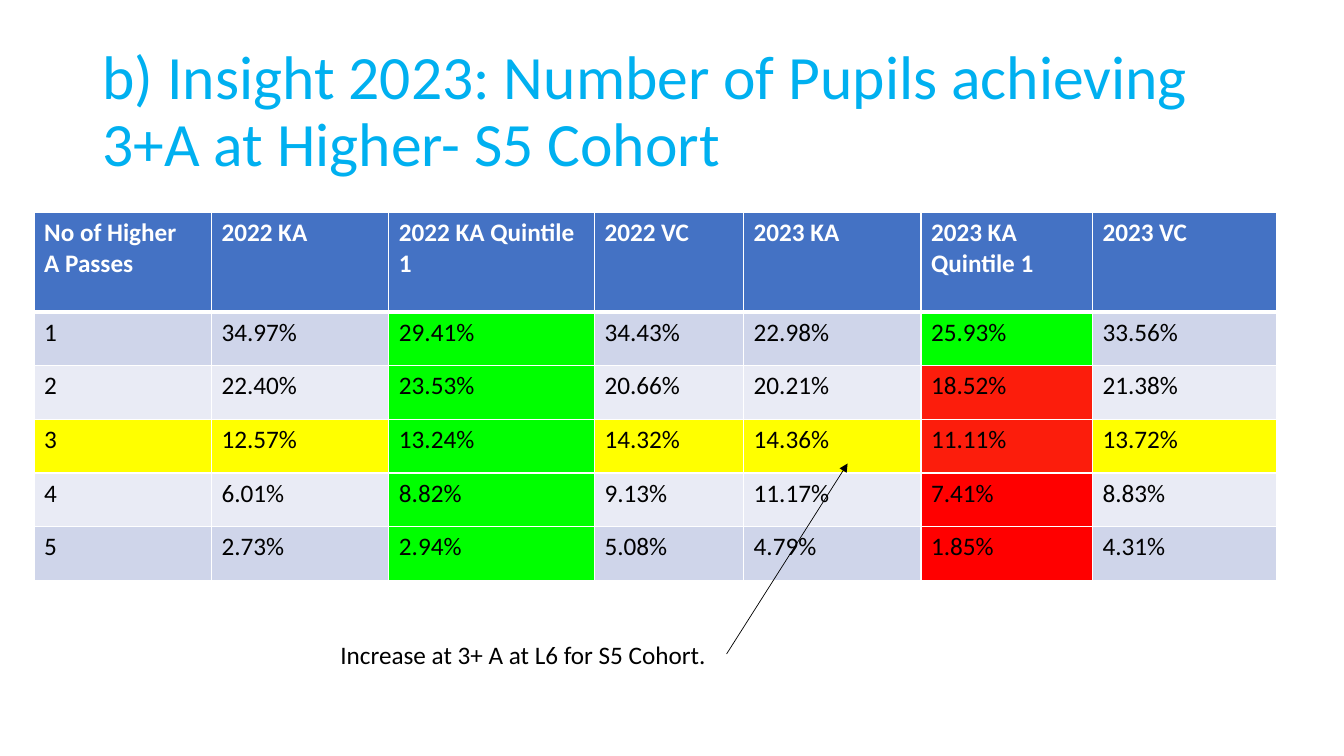
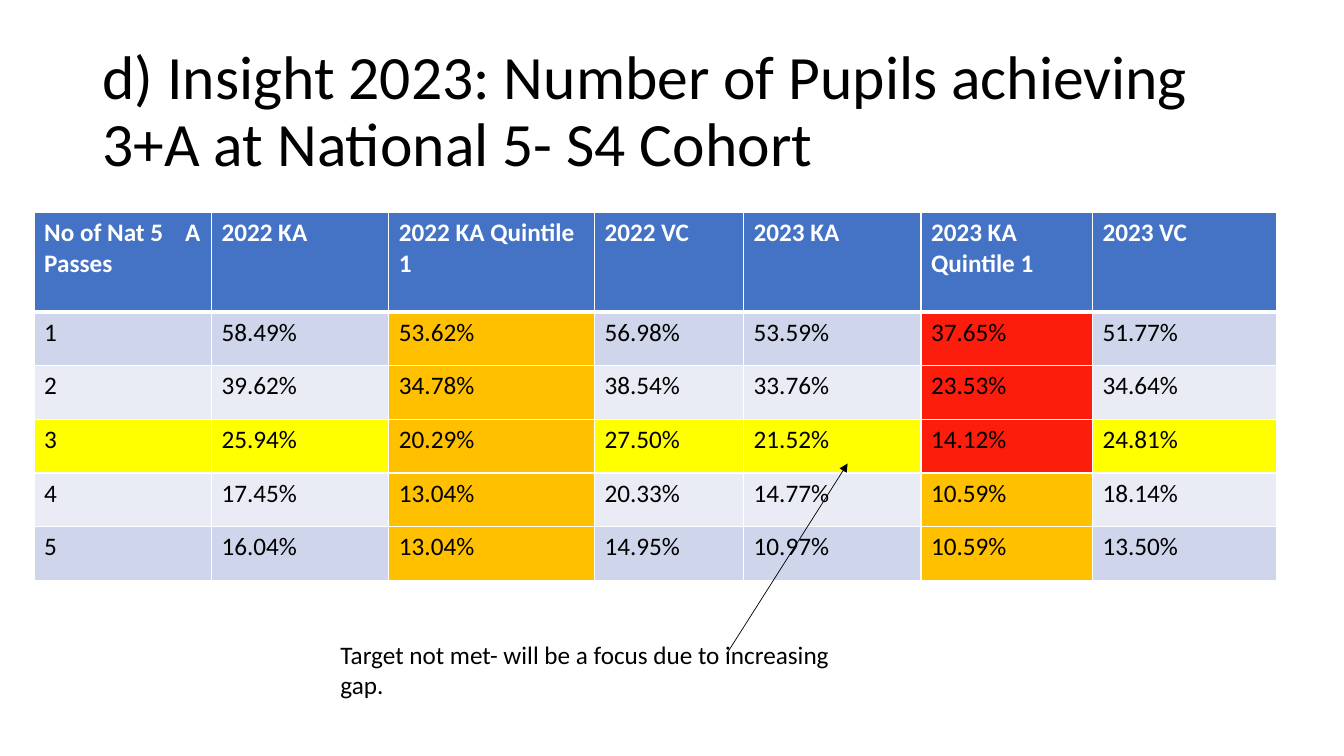
from pptx import Presentation
from pptx.dml.color import RGBColor
from pptx.enum.shapes import MSO_CONNECTOR
from pptx.enum.text import MSO_ANCHOR, MSO_AUTO_SIZE, PP_ALIGN
from pptx.oxml.ns import qn
from pptx.util import Cm, Pt
from lxml.etree import SubElement

BLACK = RGBColor(0x00, 0x00, 0x00)
WHITE = RGBColor(0xFF, 0xFF, 0xFF)
SKY = RGBColor(0x00, 0xB0, 0xF0)
HEADER_BLUE = RGBColor(0x44, 0x72, 0xC4)
BANDS = RGBColor(0xCF, 0xD5, 0xEA), RGBColor(0xE9, 0xEB, 0xF5)
YELLOW = RGBColor(0xFF, 0xFF, 0x00)
GREEN = RGBColor(0x00, 0xFF, 0x00)
AMBER = RGBColor(0xFF, 0xC0, 0x00)
SCARLET = RGBColor(0xFC, 0x1D, 0x0C)
RED = RGBColor(0xFF, 0x00, 0x00)

FONT = "Calibri"
TITLE_FONT = {"name": FONT, "size": Pt(44), "bold": False}
HEADER_FONT = {"name": FONT, "size": Pt(18), "bold": True, "color": WHITE}
BODY_FONT = {"name": FONT, "size": Pt(18), "bold": False, "color": BLACK}

TITLE_AREA = {"left": Cm(2.33), "top": Cm(1.01), "width": Cm(29.21), "height": Cm(3.68)}
TABLE_LEFT, TABLE_TOP = Cm(0.86), Cm(5.36)
COLUMN_WIDTHS = [Cm(width) for width in (4.47, 4.47, 5.18, 3.76, 4.47, 4.32, 4.65)]
HEADER_HEIGHT, ROW_HEIGHT = Cm(2.51), Cm(1.35)
TAB_STOP = Cm(3.55)
ARROW = Cm(18.31), Cm(16.48), Cm(21.36), Cm(11.68)
NOTE_LEFT, NOTE_TOP, NOTE_WIDTH = Cm(8.33), Cm(15.98), Cm(13.87)

YEAR_HEADERS = ["2022 KA", "2022 KA Quintile 1", "2022 VC",
                "2023 KA", "2023 KA\nQuintile 1", "2023 VC"]
QUINTILE_2022, QUINTILE_2023 = 2, 5
TARGET_PASSES = 3

SLIDES = [
    {
        "title": "b) Insight 2023: Number of Pupils achieving 3+A at Higher- S5 Cohort",
        "title_color": SKY,
        "first_header": "No of Higher\nA Passes",
        "rows": [
            ("34.97%", "29.41%", "34.43%", "22.98%", "25.93%", "33.56%"),
            ("22.40%", "23.53%", "20.66%", "20.21%", "18.52%", "21.38%"),
            ("12.57%", "13.24%", "14.32%", "14.36%", "11.11%", "13.72%"),
            ("6.01%", "8.82%", "9.13%", "11.17%", "7.41%", "8.83%"),
            ("2.73%", "2.94%", "5.08%", "4.79%", "1.85%", "4.31%"),
        ],
        "ratings": {QUINTILE_2022: [GREEN] * 5,
                    QUINTILE_2023: [GREEN, SCARLET, SCARLET, RED, RED]},
        "note": "Increase at 3+ A at L6 for S5 Cohort.",
        "note_height": Cm(1.03),
    },
    {
        "title": "d) Insight 2023: Number of Pupils achieving 3+A at National 5- S4 Cohort",
        "title_color": BLACK,
        "first_header": "No of Nat 5\tA\nPasses",
        "rows": [
            ("58.49%", "53.62%", "56.98%", "53.59%", "37.65%", "51.77%"),
            ("39.62%", "34.78%", "38.54%", "33.76%", "23.53%", "34.64%"),
            ("25.94%", "20.29%", "27.50%", "21.52%", "14.12%", "24.81%"),
            ("17.45%", "13.04%", "20.33%", "14.77%", "10.59%", "18.14%"),
            ("16.04%", "13.04%", "14.95%", "10.97%", "10.59%", "13.50%"),
        ],
        "ratings": {QUINTILE_2022: [AMBER] * 5,
                    QUINTILE_2023: [SCARLET] * 3 + [AMBER] * 2},
        "note": "Target not met- will be a focus due to increasing gap.",
        "note_height": Cm(1.8),
    },
]


def set_text(frame, text, style):
    frame.text = text
    for para in frame.paragraphs:
        if "\t" in para.text:
            tabs = SubElement(para._p.get_or_add_pPr(), qn("a:tabLst"))
            SubElement(tabs, qn("a:tab"), pos=str(TAB_STOP), algn="l")
        for span in para.runs:
            for name, value in style.items():
                if name == "color":
                    span.font.color.rgb = value
                else:
                    setattr(span.font, name, value)


def set_borders(cell, **widths):
    """Draw white cell borders; widths are points by side letter."""
    properties = cell._tc.get_or_add_tcPr()
    for side in "LRTB":
        line = SubElement(properties, qn(f"a:ln{side}"), w=str(Pt(widths.get(side, 1))))
        fill = SubElement(line, qn("a:solidFill"))
        SubElement(fill, qn("a:srgbClr"), val=str(WHITE))


def add_title(page, text, color):
    title = page.shapes.title
    for name, value in TITLE_AREA.items():
        setattr(title, name, value)
    frame = title.text_frame
    set_text(frame, text, TITLE_FONT | {"color": color})
    frame.auto_size = MSO_AUTO_SIZE.NONE
    frame.vertical_anchor = MSO_ANCHOR.MIDDLE
    frame.paragraphs[0].alignment = PP_ALIGN.LEFT
    frame.paragraphs[0].line_spacing = 0.9


def body_fill(passes, column, ratings):
    if column in ratings:
        return ratings[column][passes - 1]
    return YELLOW if passes == TARGET_PASSES else BANDS[(passes - 1) % 2]


def add_results_table(page, first_header, rows, ratings):
    lines = [[first_header, *YEAR_HEADERS]]
    lines += [[str(passes), *values] for passes, values in enumerate(rows, 1)]
    heights = [HEADER_HEIGHT] + [ROW_HEIGHT] * len(rows)
    table = page.shapes.add_table(len(lines), len(COLUMN_WIDTHS), TABLE_LEFT, TABLE_TOP,
                                  sum(COLUMN_WIDTHS), sum(heights)).table
    table.horz_banding = False
    for column, width in zip(table.columns, COLUMN_WIDTHS):
        column.width = width
    for row, height in zip(table.rows, heights):
        row.height = height
    for passes, line in enumerate(lines):
        for column, text in enumerate(line):
            cell = table.cell(passes, column)
            is_header = passes == 0
            set_text(cell.text_frame, text, HEADER_FONT if is_header else BODY_FONT)
            set_borders(cell, B=3 if is_header else 1, T=3 if passes == 1 else 1)
            cell.fill.solid()
            cell.fill.fore_color.rgb = (
                HEADER_BLUE if is_header else body_fill(passes, column, ratings))


def add_arrow(page):
    arrow = page.shapes.add_connector(MSO_CONNECTOR.STRAIGHT, *ARROW)
    arrow.line.color.rgb = BLACK
    arrow.line.width = Pt(0.5)
    SubElement(arrow.line._get_or_add_ln(), qn("a:tailEnd"), type="triangle")
    SubElement(arrow._element.spPr, qn("a:effectLst"))


def add_note(page, text, height):
    box = page.shapes.add_textbox(NOTE_LEFT, NOTE_TOP, NOTE_WIDTH, height)
    frame = box.text_frame
    frame.word_wrap = True
    frame.auto_size = MSO_AUTO_SIZE.SHAPE_TO_FIT_TEXT
    set_text(frame, text, BODY_FONT)


def main():
    deck = Presentation()
    deck.slide_width, deck.slide_height = Cm(33.87), Cm(19.05)
    title_only = deck.slide_layouts.get_by_name("Title Only")
    for content in SLIDES:
        page = deck.slides.add_slide(title_only)
        add_title(page, content["title"], content["title_color"])
        add_results_table(page, content["first_header"], content["rows"], content["ratings"])
        add_arrow(page)
        add_note(page, content["note"], content["note_height"])
    deck.save("out.pptx")


if __name__ == "__main__":
    main()
